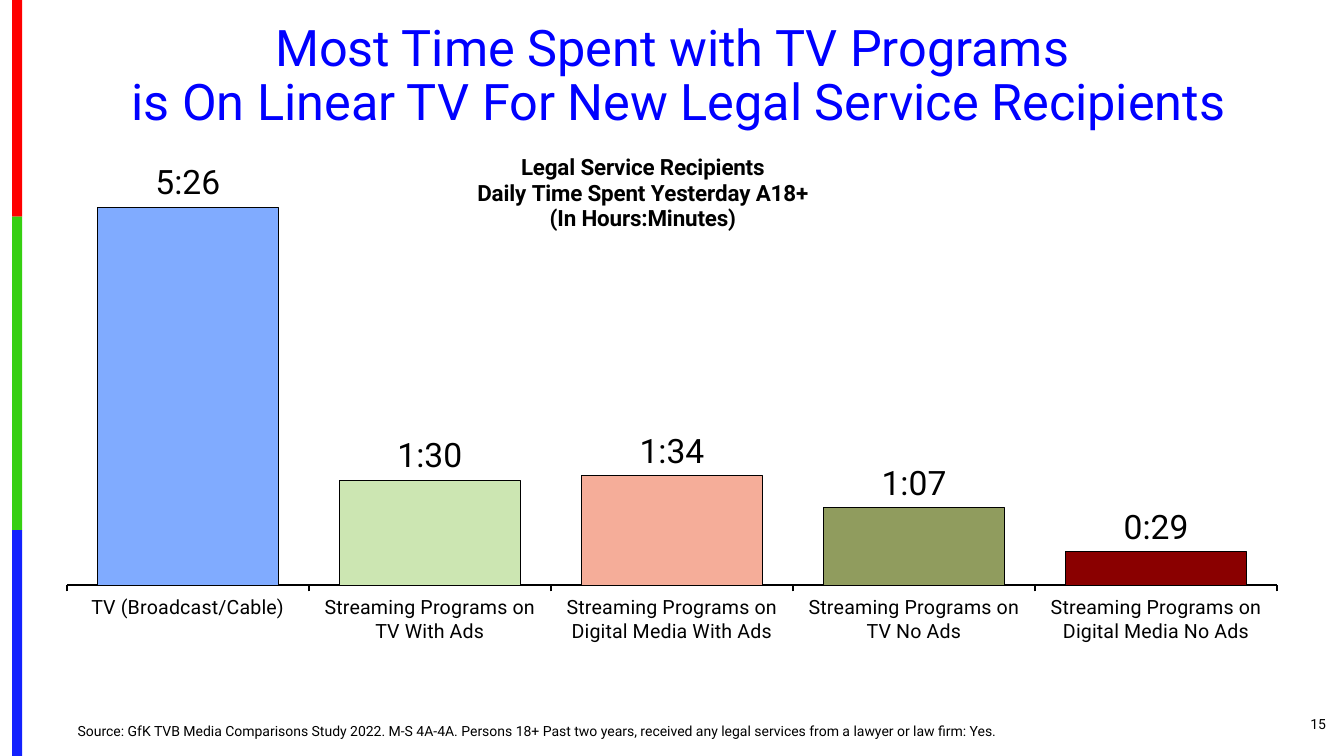
from dataclasses import dataclass

from pptx import Presentation
from pptx.chart.chart import Chart
from pptx.chart.data import CategoryChartData
from pptx.dml.color import RGBColor
from pptx.enum.chart import XL_CHART_TYPE, XL_LABEL_POSITION, XL_TICK_LABEL_POSITION, XL_TICK_MARK
from pptx.enum.shapes import MSO_SHAPE
from pptx.enum.text import MSO_ANCHOR, MSO_AUTO_SIZE, PP_ALIGN
from pptx.oxml import parse_xml
from pptx.oxml.ns import nsdecls, qn
from pptx.util import Inches, Pt

COLUMN = XL_CHART_TYPE.COLUMN_CLUSTERED
OUT_END = XL_LABEL_POSITION.OUTSIDE_END
LOW = XL_TICK_LABEL_POSITION.LOW
TICK_OUT, NO_TICK = XL_TICK_MARK.OUTSIDE, XL_TICK_MARK.NONE
RECT = MSO_SHAPE.RECTANGLE
MIDDLE, BOTTOM = MSO_ANCHOR.MIDDLE, MSO_ANCHOR.BOTTOM
NO_FIT = MSO_AUTO_SIZE.NONE
LEFT, CENTER, RIGHT = PP_ALIGN.LEFT, PP_ALIGN.CENTER, PP_ALIGN.RIGHT

FONT = "Roboto"
CLOCK = "h:mm;@"
COLORS = {
    "black": "000000", "title": "0000FF",
    "red": "FE0000", "green": "36CF12", "blue": "1322FE",
    "sky": "80ABFF", "mint": "CCE6B2", "peach": "F5AD99",
    "olive": "909C5E", "maroon": "8A0000",
}


@dataclass
class Usage:
    label: str
    hours: int
    mins: int
    color: str

    def day_part(self) -> float:
        return round((self.hours * 60 + self.mins) / 1440, 6)


@dataclass
class Stripe:
    height: float
    color: str


USAGES = [
    Usage("TV (Broadcast/Cable)", 5, 27, "sky"),
    Usage("Streaming Programs on TV With Ads", 1, 31, "mint"),
    Usage("Streaming Programs on Digital Media With Ads", 1, 35, "peach"),
    Usage("Streaming Programs on TV No Ads", 1, 7, "olive"),
    Usage("Streaming Programs on Digital Media No Ads", 0, 29, "maroon"),
]
STRIPES = [Stripe(2.15, "red"), Stripe(3.11, "green"), Stripe(2.24, "blue")]


def rgb(name: str) -> RGBColor:
    return RGBColor.from_string(COLORS[name])


def style(font, size: float, color: str = "black", bold: bool = False) -> None:
    font.name = FONT
    font.size = Pt(size)
    font.bold = bold
    font.color.rgb = rgb(color)


def write(shape, box: tuple, text: str, size: float, color: str, align, anchor, spacing: float) -> None:
    shape.left, shape.top, shape.width, shape.height = map(Inches, box)
    frame = shape.text_frame
    frame.text = text
    frame.word_wrap = True
    frame.auto_size = NO_FIT
    frame.vertical_anchor = anchor
    for para in frame.paragraphs:
        para.alignment = align
        para.line_spacing = spacing
        para.space_before = Pt(0)
        for run in para.runs:
            style(run.font, size, color)


def drop_bullet(para) -> None:
    props = para._p.get_or_add_pPr()
    props.set("marL", "0")
    props.set("indent", "0")
    props.append(parse_xml(f"<a:buNone {nsdecls('a')}/>"))


def place(part, index: int, inner: bool, **spots: float) -> None:
    for old in part.findall(qn("c:layout")):
        part.remove(old)
    target = '<c:layoutTarget val="inner"/>' if inner else ""
    modes = "".join(f'<c:{key}Mode val="edge"/>' for key in "xy")
    sizes = "".join(f'<c:{key} val="{spot}"/>' for key, spot in spots.items())
    part.insert(index, parse_xml(
        f"<c:layout {nsdecls('c')}><c:manualLayout>{target}{modes}{sizes}</c:manualLayout></c:layout>"))


def add_stripes(slide) -> None:
    top = 0.0
    for stripe in STRIPES:
        bar = slide.shapes.add_shape(RECT, Inches(0.12), Inches(top), Inches(0.1), Inches(stripe.height))
        bar.shadow.inherit = False
        bar.fill.solid()
        bar.fill.fore_color.rgb = rgb(stripe.color)
        bar.line.fill.background()
        top += stripe.height


def set_title(chart: Chart) -> None:
    chart.has_title = True
    title = chart.chart_title
    title.include_in_layout = False
    title.text_frame.text = "Legal Service Recipients\nDaily Time Spent Yesterday A18+\n(In Hours:Minutes)"
    for para in title.text_frame.paragraphs:
        para.alignment = CENTER
        for run in para.runs:
            style(run.font, 16, bold=True)
    place(title._element, 1, False, x=0.34, y=0.06)


def set_axes(chart: Chart) -> None:
    base = chart.category_axis
    base.major_tick_mark = TICK_OUT
    base.minor_tick_mark = NO_TICK
    base.tick_label_position = LOW
    base.has_major_gridlines = False
    base.format.line.color.rgb = rgb("black")
    base.format.line.width = Pt(1.5)
    style(base.tick_labels.font, 14)
    scale = chart.value_axis
    scale.minimum_scale = 0
    scale.maximum_scale = 0.25
    scale.has_major_gridlines = False
    scale.visible = False


def paint_bars(chart: Chart) -> None:
    plot = chart.plots[0]
    plot.gap_width = 34
    plot.vary_by_categories = False
    plot.has_data_labels = True
    labels = plot.data_labels
    labels.show_value = True
    labels.position = OUT_END
    labels.number_format = CLOCK
    labels.number_format_is_linked = False
    style(labels.font, 24)
    for index, usage in enumerate(USAGES):
        look = plot.series[0].points[index].format
        look.fill.solid()
        look.fill.fore_color.rgb = rgb(usage.color)
        look.line.color.rgb = rgb("black")
        look.line.width = Pt(0.75)


def add_bars(slide) -> None:
    data = CategoryChartData(number_format=CLOCK)
    data.categories = [usage.label for usage in USAGES]
    data.add_series("Series 1", [usage.day_part() for usage in USAGES])
    box = map(Inches, (0.54, 1.17, 12.25, 5.45))
    chart = slide.shapes.add_chart(COLUMN, *box, data).chart
    chart.has_legend = False
    style(chart.font, 10)
    set_title(chart)
    set_axes(chart)
    paint_bars(chart)
    area = chart._chartSpace.find(qn("c:chart")).find(qn("c:plotArea"))
    place(area, 0, True, x=0.01, y=0.093, w=0.98, h=0.758)


def main() -> None:
    deck = Presentation()
    deck.slide_width, deck.slide_height = Inches(13.33), Inches(7.5)
    slide = deck.slides.add_slide(deck.slide_layouts[1])
    add_stripes(slide)
    write(slide.shapes.title, (0.46, 0.17, 12.42, 1.19),
          "Most Time Spent with TV Programs\v is On Linear TV For New Legal Service Recipients",
          36, "title", CENTER, MIDDLE, 0.9)
    source = slide.placeholders[1]
    write(source, (0.67, 7.14, 9.42, 0.25),
          "Source: GfK TVB Media Comparisons Study 2022. M-S 4A-4A. Persons 18+ Past two years, "
          "received any legal services from a lawyer or law firm: Yes.",
          10, "black", LEFT, BOTTOM, 0.9)
    drop_bullet(source.text_frame.paragraphs[0])
    add_bars(slide)
    number = slide.shapes.add_textbox(0, 0, 0, 0)
    write(number, (12.17, 6.98, 1.08, 0.4), "15", 10, "black", RIGHT, MIDDLE, 1.0)
    deck.save("out.pptx")


if __name__ == "__main__":
    main()
